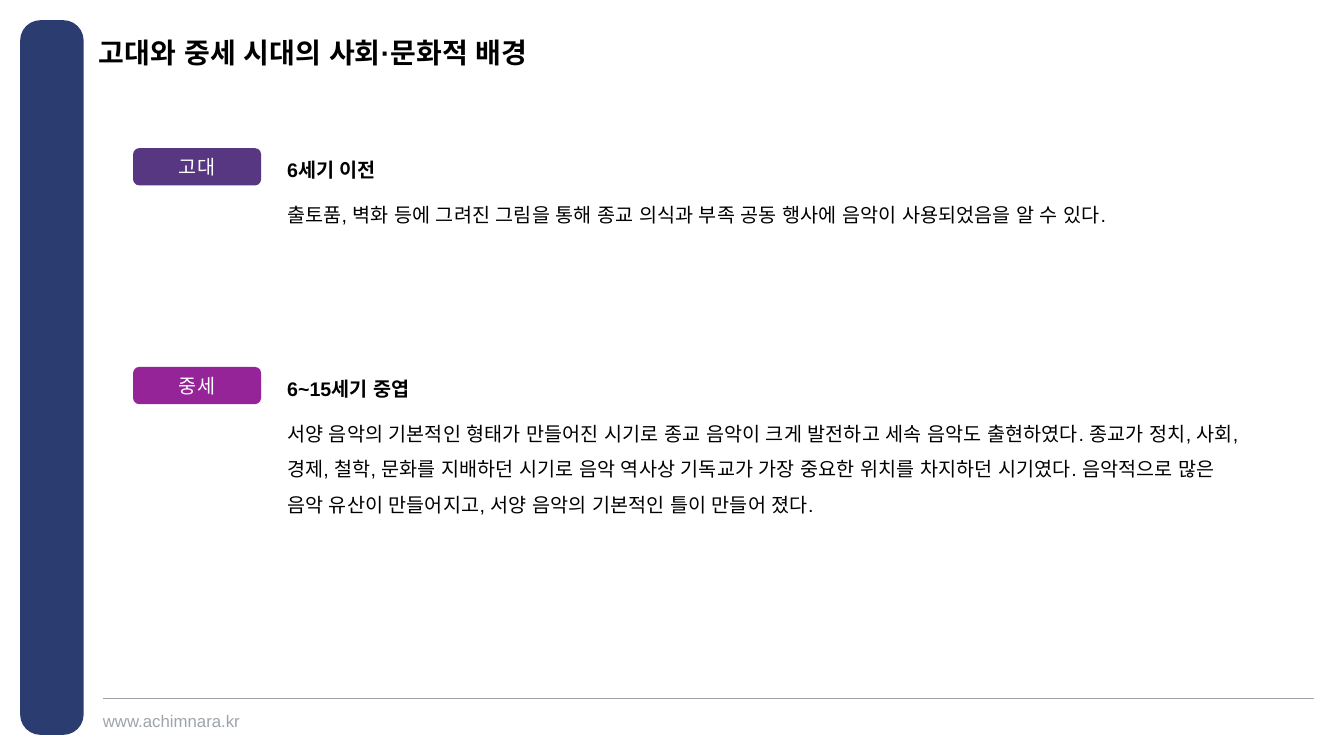
from lxml import etree
from pptx import Presentation
from pptx.dml.color import RGBColor
from pptx.enum.shapes import MSO_CONNECTOR, MSO_SHAPE
from pptx.enum.text import MSO_ANCHOR, MSO_AUTO_SIZE, PP_ALIGN
from pptx.oxml.ns import qn
from pptx.util import Emu, Pt

ROUNDED = MSO_SHAPE.ROUNDED_RECTANGLE
STRAIGHT = MSO_CONNECTOR.STRAIGHT
TOP, MIDDLE = MSO_ANCHOR.TOP, MSO_ANCHOR.MIDDLE
LEFT, CENTER = PP_ALIGN.LEFT, PP_ALIGN.CENTER
FIXED, GROW = MSO_AUTO_SIZE.NONE, MSO_AUTO_SIZE.SHAPE_TO_FIT_TEXT

EMU_PER_PX = 9144  # 100 px to the inch
TITLE_ONLY_LAYOUT = 5
FONT = "Arial"
NAVY, PURPLE, MAGENTA = "2B3C71", "573781", "962499"
GREY, BLACK, WHITE = "9EA4AA", "000000", "FFFFFF"

# Top of the label, label, colour, period, description, description height
ERAS = [
    (147, "고대", PURPLE, "6세기 이전",
     "출토품, 벽화 등에 그려진 그림을 통해 종교 의식과 부족 공동 행사에 "
     "음악이 사용되었음을 알 수 있다.", 41),
    (364, "중세", MAGENTA, "6~15세기 중엽",
     "서양 음악의 기본적인 형태가 만들어진 시기로 종교 음악이 크게 발전하고 "
     "세속 음악도 출현하였다. 종교가 정치, 사회, 경제, 철학, 문화를 지배하던 "
     "시기로 음악 역사상 기독교가 가장 중요한 위치를 차지하던 시기였다. "
     "음악적으로 많은 음악 유산이 만들어지고, 서양 음악의 기본적인 틀이 "
     "만들어 졌다.", 112),
]


def px(value):
    return Emu(value * EMU_PER_PX)


def box(*values):
    return [px(value) for value in values]


def color(hex_string):
    return RGBColor.from_string(hex_string)


def set_values(target, values):
    for name, value in values.items():
        setattr(target, name, value)


def write(shape, text, text_color, size=14, bold=False, spacing=1.0,
          align=LEFT, **frame_values):
    frame = shape.text_frame
    set_values(frame, {"word_wrap": True, **frame_values})
    paragraph = frame.paragraphs[0]
    run = paragraph.add_run()
    run.text = text
    set_values(paragraph, {"alignment": align, "line_spacing": spacing})
    set_values(run.font, {"name": FONT, "size": Pt(size), "bold": bold})
    run.font.color.rgb = color(text_color)
    # Korean letters and the spaces between them use the East Asian font
    properties = run._r.get_or_add_rPr()
    etree.SubElement(properties, qn("a:ea"), typeface=FONT)


def no_margins():
    return {f"margin_{side}": 0 for side in ("left", "top", "right", "bottom")}


def add_title(slide, text):
    title = slide.shapes.title
    position = zip(("left", "top", "width", "height"), box(98, 39, 787, 28))
    set_values(title, dict(position))
    write(title, text, BLACK, size=20, bold=True, spacing=0.9,
          vertical_anchor=TOP, auto_size=FIXED, **no_margins())


def add_rounded_bar(slide, left, top, width, height, fill, corner=0.167):
    bar = slide.shapes.add_shape(ROUNDED, *box(left, top, width, height))
    bar.shadow.inherit = False
    bar.adjustments[0] = corner
    bar.fill.solid()
    bar.fill.fore_color.rgb = color(fill)
    bar.line.fill.background()
    return bar


def add_rule(slide, left, right, top):
    rule = slide.shapes.add_connector(STRAIGHT, *box(left, top, right, top))
    rule.line.color.rgb = color(GREY)
    rule.line.width = Pt(0.5)
    etree.SubElement(rule.element.spPr, qn("a:effectLst"))


def add_text(slide, left, top, width, height, text, text_color, **values):
    text_box = slide.shapes.add_textbox(*box(left, top, width, height))
    write(text_box, text, text_color, **values)


def add_era(slide, top, name, fill, period, description, height):
    label = add_rounded_bar(slide, 132, top, 127, 37, fill)
    write(label, name, WHITE, align=CENTER, vertical_anchor=MIDDLE)
    body = {"text_color": BLACK, "spacing": 1.5, "auto_size": GROW}
    add_text(slide, 275, top - 7, 970, 41, period, bold=True, **body)
    add_text(slide, 275, top + 38, 970, height, description, **body)


def main():
    presentation = Presentation()
    presentation.slide_width, presentation.slide_height = box(1333, 750)
    layout = presentation.slide_layouts[TITLE_ONLY_LAYOUT]
    slide = presentation.slides.add_slide(layout)

    # Side bar and footer
    add_rounded_bar(slide, 20, 20, 63, 709, NAVY, corner=0.32)
    add_rule(slide, 102, 1303, 693)
    add_text(slide, 102, 705, 150, 20, "www.achimnara.kr", GREY, size=12,
             **no_margins())

    # Title and the two eras
    add_title(slide, "고대와 중세 시대의 사회·문화적 배경")
    for era in ERAS:
        add_era(slide, *era)

    presentation.save("out.pptx")


if __name__ == "__main__":
    main()
